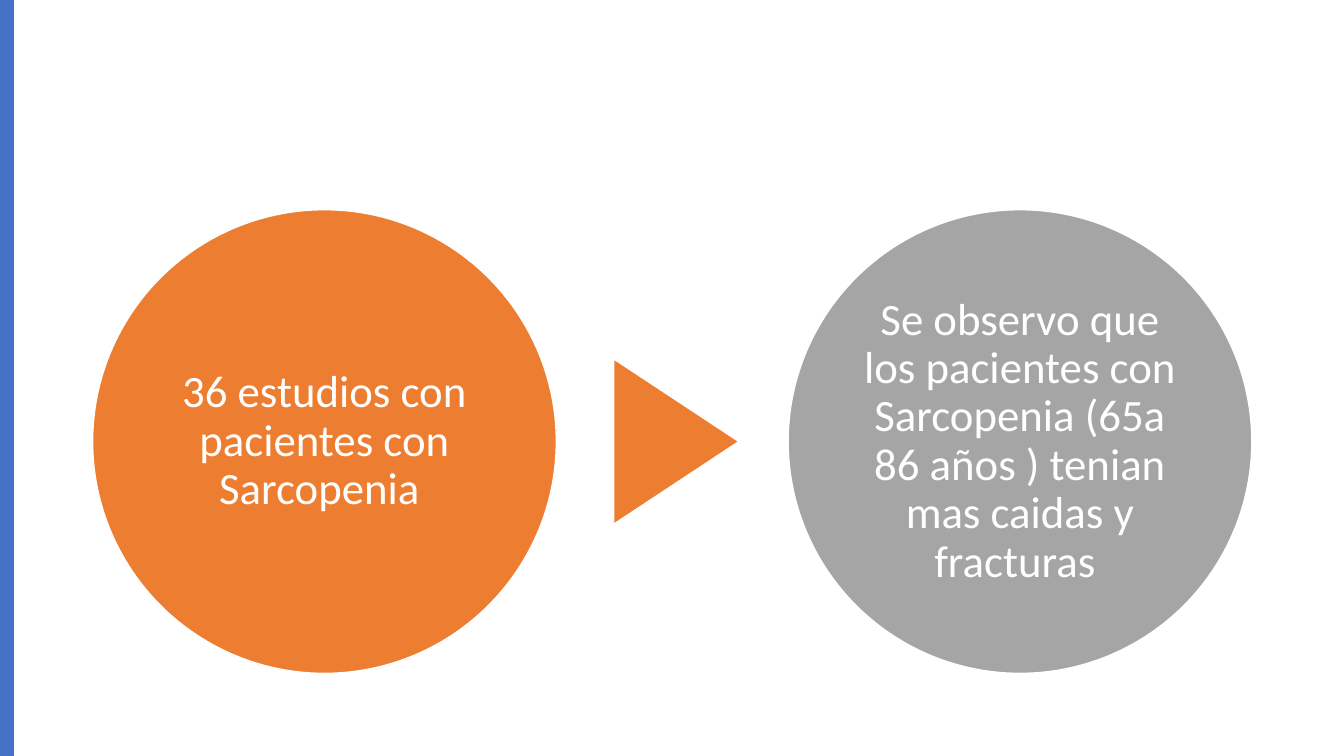
"""Build a slide where a study sample leads to its finding."""
from pptx import Presentation
from pptx import util as u
from pptx.dml.color import RGBColor
from pptx.enum import shapes, text

WHITE = RGBColor(0xFF, 0xFF, 0xFF)
BLUE = RGBColor(0x44, 0x72, 0xC4)
ORANGE = RGBColor(0xED, 0x7D, 0x31)
GRAY = RGBColor(0xA5, 0xA5, 0xA5)

SLIDE_W, SLIDE_H = 960, 540
DIAMETER = 331.2
CIRCLE_TOP = 149.8
SAMPLE_LEFT, FINDING_LEFT = 66.2, 563
MIDDLE_Y = CIRCLE_TOP + DIAMETER / 2
ARROW_MIDDLE_X = 482.8
ARROW_BASE, ARROW_HEIGHT = 115.9, 87.8


def write(shape, wording, *, size=32, font="Calibri", color=WHITE, spacing=0.9, inset=2.9):
    """Put centred, wrapped wording into a shape."""
    frame = shape.text_frame
    frame.word_wrap = True
    frame.vertical_anchor = text.MSO_ANCHOR.MIDDLE
    frame.margin_left = frame.margin_right = u.Pt(inset)
    frame.margin_top = frame.margin_bottom = u.Pt(inset)
    paragraph = frame.paragraphs[0]
    paragraph.alignment = text.PP_ALIGN.CENTER
    paragraph.line_spacing = spacing
    run = paragraph.add_run()
    run.text = wording
    run.font.size = u.Pt(size)
    run.font.name = font
    run.font.color.rgb = color


class ProcessSlide:
    """Hold the current slide and the style of its elements."""

    def __init__(self, slide, outline=WHITE, outline_width=1):
        self.slide = slide
        self.outline = outline
        self.outline_width = outline_width

    def block(self, kind, left, top, width, height, fill):
        """Add a plain filled shape."""
        shape = self.slide.shapes.add_shape(
            kind, u.Pt(left), u.Pt(top), u.Pt(width), u.Pt(height))
        shape.shadow.inherit = False
        shape.fill.solid()
        shape.fill.fore_color.rgb = fill
        shape.line.fill.background()
        return shape

    def side_bar(self, width, fill):
        """Add the full-height bar at the left edge."""
        return self.block(shapes.MSO_SHAPE.RECTANGLE, 0, 0, width, SLIDE_H, fill)

    def circle(self, left, fill, wording):
        """Add an outlined circle with its statement."""
        step = self.block(shapes.MSO_SHAPE.OVAL, left, CIRCLE_TOP, DIAMETER, DIAMETER, fill)
        step.line.color.rgb = self.outline
        step.line.width = u.Pt(self.outline_width)
        write(step, wording)

    def arrow(self, fill):
        """Add the triangle that points to the right."""
        pointer = self.block(
            shapes.MSO_SHAPE.ISOSCELES_TRIANGLE,
            ARROW_MIDDLE_X - ARROW_BASE / 2, MIDDLE_Y - ARROW_HEIGHT / 2,
            ARROW_BASE, ARROW_HEIGHT, fill)
        pointer.rotation = 90


def main():
    """Build and save the presentation."""
    deck = Presentation()
    deck.slide_width, deck.slide_height = u.Pt(SLIDE_W), u.Pt(SLIDE_H)
    process = ProcessSlide(deck.slides.add_slide(deck.slide_layouts[6]))
    process.side_bar(10, BLUE)
    process.circle(SAMPLE_LEFT, ORANGE, "36 estudios con pacientes con Sarcopenia ")
    process.arrow(ORANGE)
    process.circle(
        FINDING_LEFT, GRAY,
        "Se observo que los pacientes con Sarcopenia (65a 86 años ) "
        "tenian mas caidas y fracturas ")
    deck.save("out.pptx")


if __name__ == "__main__":
    main()
